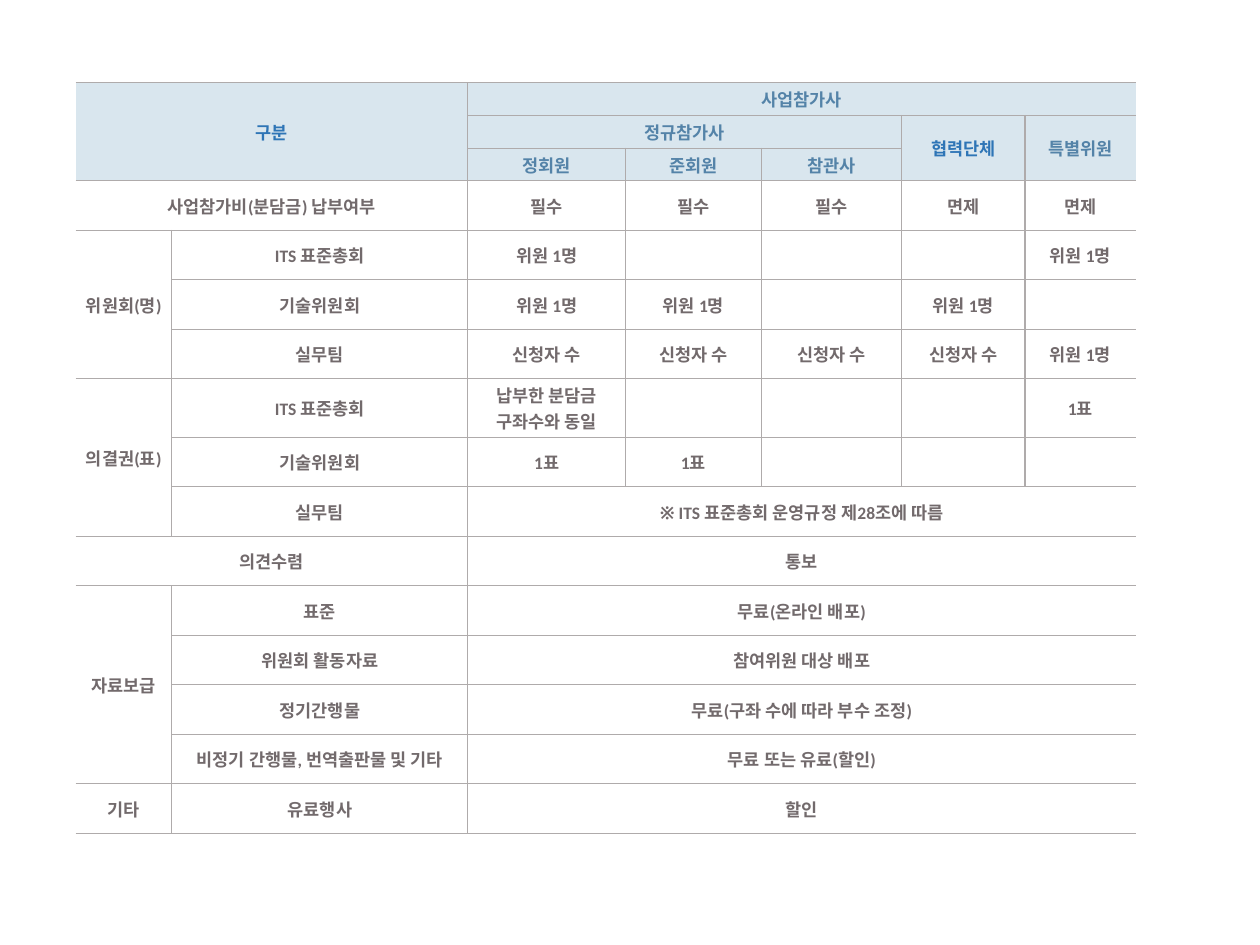
from itertools import takewhile

from lxml.etree import SubElement
from pptx import Presentation
from pptx.dml.color import RGBColor
from pptx.enum.text import MSO_ANCHOR, PP_ALIGN
from pptx.oxml.ns import qn
from pptx.util import Inches, Pt

COLORS = {
    "header_fill": "D9E6EE",
    "body_fill": "FFFFFF",
    "header_text": "5483A8",
    "accent_text": "2E75B6",
    "body_text": "726A6C",
    "border": "AFABAB",
}
TEXT_FORMAT = {"name": "Calibri", "size": Pt(14), "bold": True}
CELL_FORMAT = {
    "vertical_anchor": MSO_ANCHOR.MIDDLE,
    "margin_left": Inches(0.08),
    "margin_right": Inches(0.08),
    "margin_top": Inches(0.04),
    "margin_bottom": Inches(0.04),
}
PLAIN_STYLE = "{2D5ABB26-0587-4C30-8999-92F81FD0307C}"

COLUMN_WIDTHS = [1.07, 3.29, 1.75, 1.51, 1.56, 1.37, 1.23]
HEADER_ROWS = 3
HEADER_HEIGHT, BODY_HEIGHT = 0.28, 0.55
ACCENT_HEADERS = {"구분", "협력단체"}

# "<" continues the cell to the left, "^" continues the cell above.
LEFT, UP = "<", "^"
WIDE = [LEFT] * 4
ROWS = [
    ["구분", LEFT, "사업참가사", *WIDE],
    [UP, UP, "정규참가사", LEFT, LEFT, "협력단체", "특별위원"],
    [UP, UP, "정회원", "준회원", "참관사", UP, UP],
    ["사업참가비(분담금) 납부여부", LEFT, "필수", "필수", "필수", "면제", "면제"],
    ["위원회(명)", "ITS 표준총회", "위원 1명", "", "", "", "위원 1명"],
    [UP, "기술위원회", "위원 1명", "위원 1명", "", "위원 1명", ""],
    [UP, "실무팀", "신청자 수", "신청자 수", "신청자 수", "신청자 수", "위원 1명"],
    ["의결권(표)", "ITS 표준총회", "납부한 분담금\n구좌수와 동일", "", "", "", "1표"],
    [UP, "기술위원회", "1표", "1표", "", "", ""],
    [UP, "실무팀", "※ ITS 표준총회 운영규정 제28조에 따름", *WIDE],
    ["의견수렴", LEFT, "통보", *WIDE],
    ["자료보급", "표준", "무료(온라인 배포)", *WIDE],
    [UP, "위원회 활동자료", "참여위원 대상 배포", *WIDE],
    [UP, "정기간행물", "무료(구좌 수에 따라 부수 조정)", *WIDE],
    [UP, "비정기 간행물, 번역출판물 및 기타", "무료 또는 유료(할인)", *WIDE],
    ["기타", "유료행사", "할인", *WIDE],
]


def apply_format(target, values):
    for name, value in values.items():
        setattr(target, name, value)


def run_length(marks, mark):
    """Count how often mark repeats at the start of marks."""
    return len(list(takewhile(lambda item: item == mark, marks)))


def set_borders(cell, open_left, open_right):
    """Draw the four cell borders, leaving the table's outer sides open."""
    properties = cell._tc.get_or_add_tcPr()
    sides = {"lnL": open_left, "lnR": open_right, "lnT": False, "lnB": False}
    for side, is_open in sides.items():
        line = SubElement(properties, qn(f"a:{side}"), w=str(Pt(1)))
        if is_open:
            SubElement(line, qn("a:noFill"))
        else:
            fill = SubElement(line, qn("a:solidFill"))
            SubElement(fill, qn("a:srgbClr"), val=COLORS["border"])


def set_fill(cell, color):
    cell.fill.solid()
    cell.fill.fore_color.rgb = RGBColor.from_string(COLORS[color])


def write_text(cell, text, color):
    cell.text = text
    for para in cell.text_frame.paragraphs:
        para.alignment = PP_ALIGN.CENTER
        for span in para.runs:
            apply_format(span.font, TEXT_FORMAT)
            span.font.color.rgb = RGBColor.from_string(COLORS[color])


def text_color(row, text):
    if row >= HEADER_ROWS:
        return "body_text"
    return "accent_text" if text in ACCENT_HEADERS else "header_text"


def fill_cell(table, row, column):
    text = ROWS[row][column]
    cell = table.cell(row, column)
    if text not in (LEFT, UP):
        right = column + run_length(ROWS[row][column + 1:], LEFT)
        bottom = row + run_length([line[column] for line in ROWS[row + 1:]], UP)
        if (row, column) != (bottom, right):
            cell.merge(table.cell(bottom, right))
        apply_format(cell, CELL_FORMAT)
        write_text(cell, text, text_color(row, text))
        set_borders(cell, column == 0, right == len(COLUMN_WIDTHS) - 1)
    set_fill(cell, "header_fill" if row < HEADER_ROWS else "body_fill")


def add_membership_table(page):
    heights = [HEADER_HEIGHT if row < HEADER_ROWS else BODY_HEIGHT
               for row in range(len(ROWS))]
    frame = page.shapes.add_table(
        len(ROWS), len(COLUMN_WIDTHS), Inches(0.84), Inches(0.92),
        Inches(sum(COLUMN_WIDTHS)), Inches(sum(heights)))
    table = frame.table
    table._tbl.tblPr.find(qn("a:tableStyleId")).text = PLAIN_STYLE
    apply_format(table, {"first_row": False, "horz_banding": False})
    for column, width in zip(table.columns, COLUMN_WIDTHS):
        column.width = Inches(width)
    for row, height in zip(table.rows, heights):
        row.height = Inches(height)
    for row in range(len(ROWS)):
        for column in range(len(COLUMN_WIDTHS)):
            fill_cell(table, row, column)


def main():
    deck = Presentation()
    deck.slide_width, deck.slide_height = Inches(14), Inches(10.5)
    page = deck.slides.add_slide(deck.slide_layouts[6])
    add_membership_table(page)
    deck.save("out.pptx")


if __name__ == "__main__":
    main()
